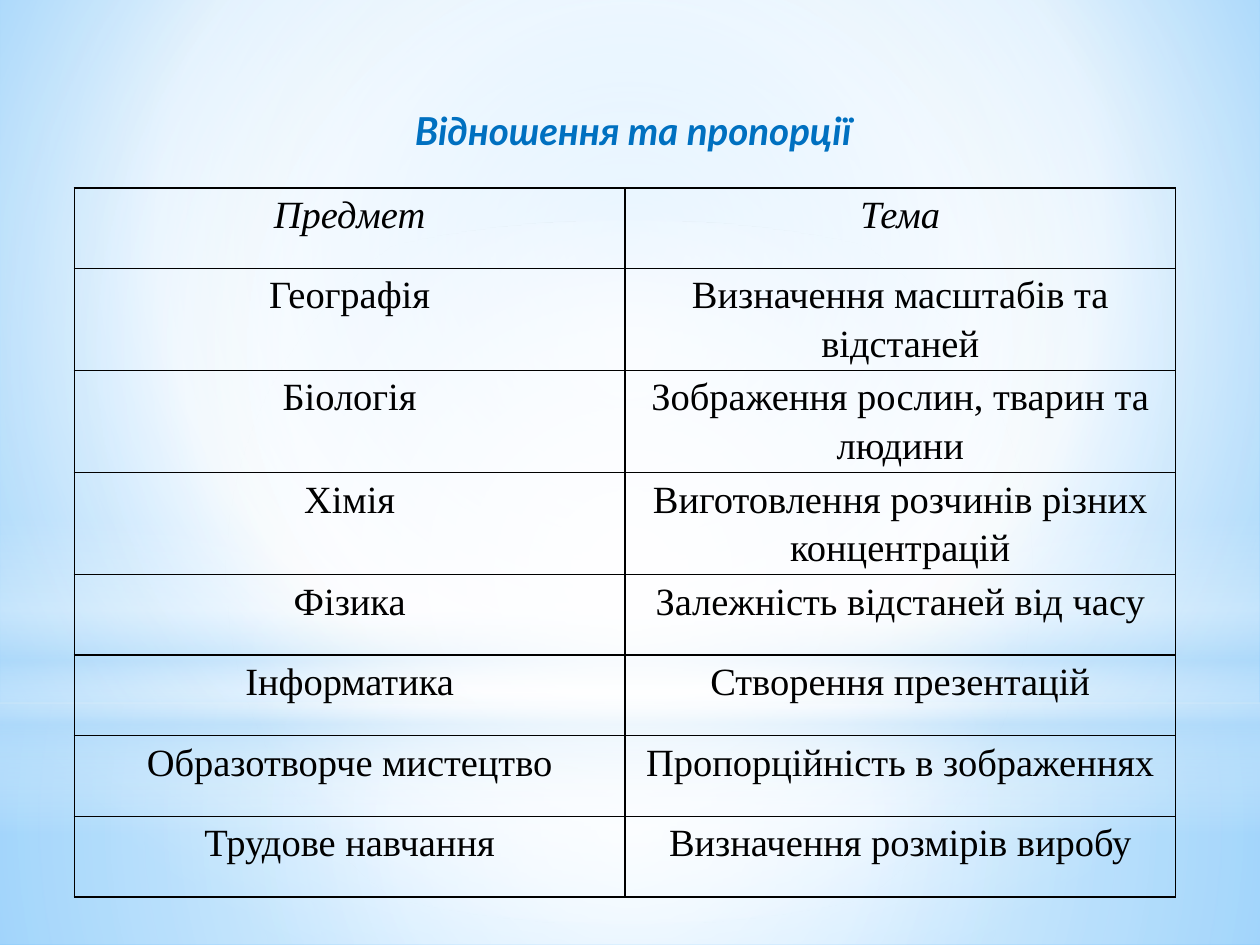
from lxml import etree
from pptx import Presentation
from pptx import util as u
from pptx.dml.color import RGBColor
from pptx.enum import shapes, text
from pptx.oxml import parse_xml
from pptx.oxml.ns import nsdecls, qn

W, H = 10, 7.5
CENTRE = (50, 50, 50, 50)
HEAD = "Відношення та пропорції"
ROWS = [
    ("Предмет", "Тема"),
    ("Географія", "Визначення масштабів та відстаней"),
    ("Біологія", "Зображення рослин, тварин та людини"),
    ("Хімія", "Виготовлення розчинів різних концентрацій"),
    ("Фізика", "Залежність відстаней від часу"),
    ("Інформатика", "Створення презентацій"),
    ("Образотворче мистецтво", "Пропорційність в зображеннях"),
    ("Трудове навчання", "Визначення розмірів виробу"),
]
TALL_ROWS = (1, 2, 3)
HEAD_FONT = dict(name="Lato", size=u.Pt(22), bold=True, italic=True)
CELL_FONT = dict(name="Times New Roman", size=u.Pt(22), bold=False)
LAYERS = [
    ("RECTANGLE", (0, 5.58, W, 1.92), CENTRE,
     [(0, "FFFFFF", 91), (37, "FFFFFF", 76), (100, "B4DCFA", 79)]),
    ("RECTANGLE", (0, 0, W, 5.58), CENTRE,
     [(0, "FFFFFF", 89), (48, "FFFFFF", 62), (100, "B4DCFA", 79)]),
    ("RECTANGLE", (0, 4.12, W, 2.5), None,
     [(0, "FFFFFF", 0), (29, "FFFFFF", 30), (45, "B4DCFA", 40),
      (55, "FFFFFF", 26), (65, "B4DCFA", 60), (100, "FFFFFF", 0)]),
    ("OVAL", (0, 1.75, W, 5.58), CENTRE,
     [(0, "FFFFFF", 100), (56, "FFFFFF", 0)]),
]


def colour(value):
    """Turn a hex string into a colour."""
    return RGBColor.from_string(value)


def set_all(obj, values):
    """Set every attribute in a dict of format values."""
    for name, value in values.items():
        setattr(obj, name, value)


def inches(box):
    """Turn a box in inches into lengths."""
    return [u.Inches(v) for v in box]


def gradient(fill, parent, stops, focus):
    """Fill with a circular gradient around focus, or a vertical one."""
    fill.solid()
    gs = "".join(
        f'<a:gs pos="{pos * 1000}"><a:srgbClr val="{c}">'
        f'<a:alpha val="{alpha * 1000}"/></a:srgbClr></a:gs>'
        for pos, c, alpha in stops)
    way = '<a:lin ang="5400000" scaled="0"/>'
    if focus:
        sides = " ".join(f'{k}="{v * 1000}"' for k, v in zip("ltrb", focus))
        way = f'<a:path path="circle"><a:fillToRect {sides}/></a:path>'
    grad = parse_xml(f'<a:gradFill {nsdecls("a")} rotWithShape="1">'
                     f'<a:gsLst>{gs}</a:gsLst>{way}</a:gradFill>')
    parent.replace(parent.find(qn("a:solidFill")), grad)


def backdrop(s):
    """Paint the background and its soft light layers."""
    fill = s.background.fill
    fill.solid()
    gradient(fill, next(s.element.iter(qn("p:bgPr"))),
             [(0, "9ED5FF", 100), (60, "FFFFFF", 100), (100, "5BB9FF", 100)],
             (20, 10, 20, 60))
    for kind, box, focus, stops in LAYERS:
        sp = s.shapes.add_shape(getattr(shapes.MSO_SHAPE, kind), *inches(box))
        sp.shadow.inherit = False
        sp.line.fill.background()
        gradient(sp.fill, sp.element.spPr, stops, focus)


def heading(s, box):
    """Put the heading in the body placeholder."""
    body = s.placeholders[1]
    s.shapes.title.element.getparent().remove(s.shapes.title.element)
    s.shapes.element.append(body.element)
    set_all(body, dict(zip(("left", "top", "width", "height"), inches(box))))
    tf = body.text_frame
    set_all(tf, dict(word_wrap=True, vertical_anchor=text.MSO_ANCHOR.TOP))
    p = tf.paragraphs[0]
    set_all(p, dict(alignment=text.PP_ALIGN.CENTER, space_before=u.Pt(4.4),
                    space_after=u.Pt(3)))
    pPr = p._p.get_or_add_pPr()
    pPr.set("marL", str(u.Inches(0.05)))
    pPr.set("indent", "0")
    etree.SubElement(pPr, qn("a:buNone"))
    r = p.add_run()
    r.text = HEAD
    set_all(r.font, HEAD_FONT)
    r.font.color.rgb = colour("0070C0")


def border(cell, value, width):
    """Draw a line on all four sides of a cell."""
    tcPr = cell._tc.get_or_add_tcPr()
    for side in "LRTB":
        tcPr.append(parse_xml(
            f'<a:ln{side} {nsdecls("a")} w="{u.Pt(width)}"><a:solidFill>'
            f'<a:srgbClr val="{value}"/></a:solidFill></a:ln{side}>'))


def write_cell(cell, words, italic):
    """Format one cell and write its words."""
    border(cell, "000000", 1)
    cell.fill.background()
    set_all(cell, dict(margin_left=u.Inches(0.07), margin_right=u.Inches(0.07),
                       margin_top=0, margin_bottom=0))
    p = cell.text_frame.paragraphs[0]
    set_all(p, dict(alignment=text.PP_ALIGN.CENTER, line_spacing=1.15))
    r = p.add_run()
    r.text = words
    set_all(r.font, dict(CELL_FONT, italic=italic))
    r.font.color.rgb = colour("000000")


def subject_table(s, box):
    """Lay out subjects and topics in two equal columns."""
    table = s.shapes.add_table(len(ROWS), 2, *inches(box)).table
    set_all(table, dict(first_row=False, horz_banding=False))
    for i, row in enumerate(ROWS):
        table.rows[i].height = u.Inches(0.81 if i in TALL_ROWS else 0.64)
        for j, words in enumerate(row):
            write_cell(table.cell(i, j), words, i == 0)


def main():
    """Build and save the slide."""
    prs = Presentation()
    set_all(prs, dict(slide_width=u.Inches(W), slide_height=u.Inches(H)))
    s = prs.slides.add_slide(prs.slide_layouts[1])
    backdrop(s)
    heading(s, (0.59, 0.8, 8.82, 6.1))
    subject_table(s, (0.59, 1.49, 8.74, 5.63))
    prs.save("out.pptx")


if __name__ == "__main__":
    main()
